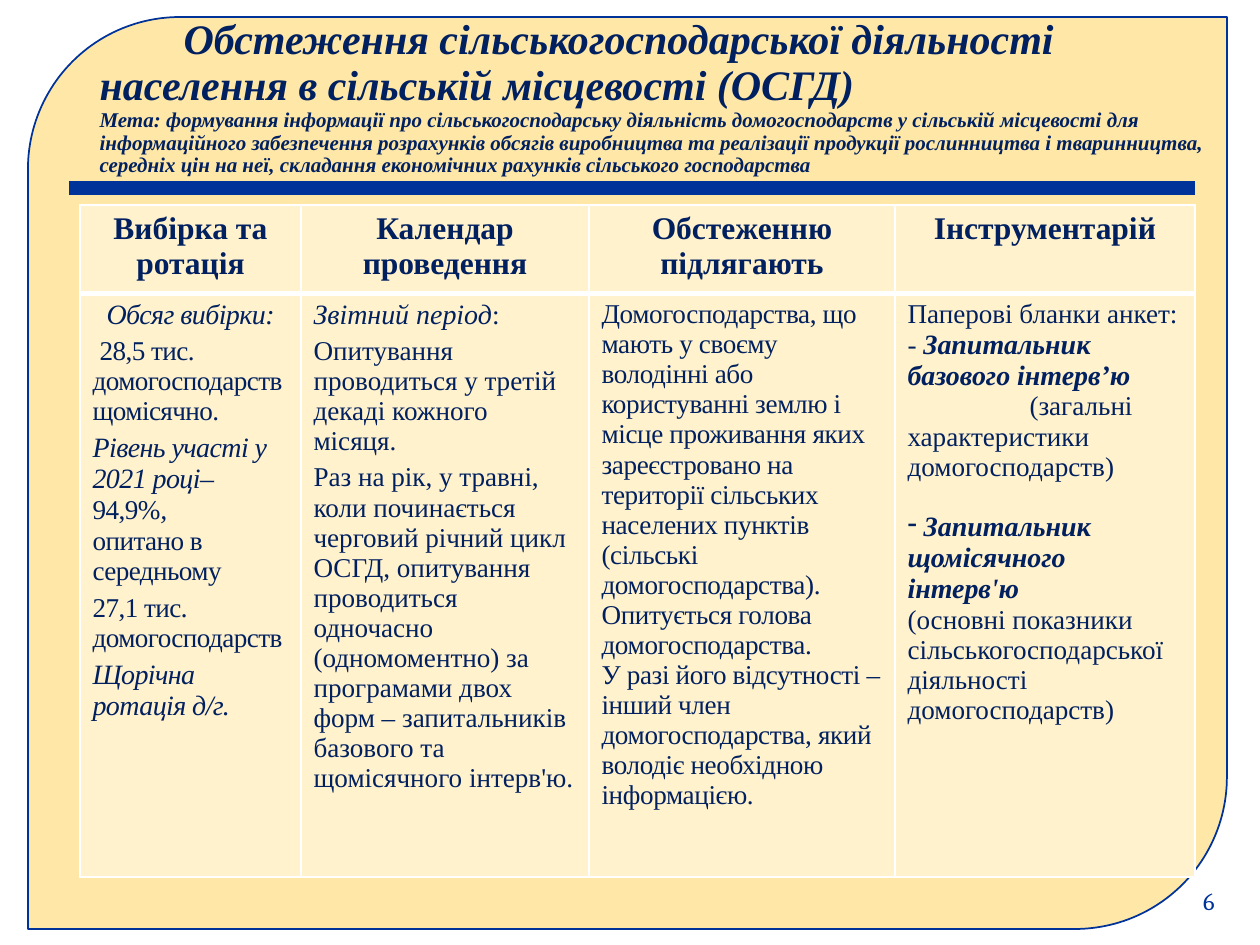
"""Build the slide on the rural household farming survey."""
import pptx
import pptx.util
import pptx.dml.color
import pptx.enum.shapes
import pptx.enum.text
import pptx.oxml
import lxml.etree
from dataclasses import dataclass


@dataclass(frozen=True)
class Theme:
    blue: str = "003399"
    navy: str = "002060"
    sand: str = "FFE8A7"
    cream: str = "FFF2CC"
    white: str = "FFFFFF"
    serif: str = "Times New Roman"
    digit: str = "Cambria"
    title: float = 24
    aim: float = 12
    head: float = 18
    body: float = 15.5
    key: float = 16
    page: float = 14
    gap: float = 3.4


look = Theme()
rgb = pptx.dml.color.RGBColor.from_string
Pt = pptx.util.Pt
side = pptx.enum.text.PP_ALIGN
qn = pptx.oxml.ns.qn


def px(num):
    return pptx.util.Emu(round(num * 914400 / 126))


def put(para, text, size, mark="", tone=look.navy, face=look.serif, track=0):
    run = para.add_run()
    run.text = text
    font = run.font
    font.size, font.name = Pt(size), face
    font.bold, font.italic = "b" in mark, "i" in mark
    font.color.rgb = rgb(tone)
    if track:
        run._r.get_or_add_rPr().set("spc", str(track))


deck = pptx.Presentation()
deck.slide_width, deck.slide_height = px(1260), px(945)
slide = deck.slides.add_slide(deck.slide_layouts[5])
shapes = slide.shapes

panel = shapes.add_shape(
    pptx.enum.shapes.MSO_SHAPE.ROUND_2_DIAG_RECTANGLE, px(28), px(17), px(1199), px(912))
panel.shadow.inherit = False
panel.fill.solid()
panel.fill.fore_color.rgb = rgb(look.sand)
panel.line.color.rgb = rgb(look.blue)
panel.line.width = Pt(1)

title = shapes.title
panel._element.addnext(title._element)
title.left, title.top, title.width, title.height = px(87), px(30), px(1140), px(136)
frame = title.text_frame
frame.word_wrap = True
frame.auto_size = pptx.enum.text.MSO_AUTO_SIZE.NONE
frame.vertical_anchor = pptx.enum.text.MSO_ANCHOR.MIDDLE
para = frame.paragraphs[0]
para.alignment = side.LEFT
para.line_spacing = 0.9
para._p.get_or_add_pPr().set("indent", str(px(84)))
put(para, "Обстеження сільськогосподарської діяльності населення "
    "в сільській місцевості (ОСГД)", look.title, "bi")
para.add_line_break()
put(para, "Мета: формування інформації про сільськогосподарську діяльність "
    "домогосподарств у сільській місцевості для інформаційного забезпечення "
    "розрахунків обсягів виробництва та реалізації продукції рослинництва і "
    "тваринництва, середніх цін на неї, складання економічних рахунків "
    "сільського господарства", look.aim, "bi")

page = shapes.add_textbox(px(1163), px(876), px(64), px(50))
page.text_frame.word_wrap = True
page.text_frame.vertical_anchor = pptx.enum.text.MSO_ANCHOR.MIDDLE
para = page.text_frame.paragraphs[0]
para.alignment = side.RIGHT
put(para, "6", look.page, tone=look.blue, face=look.digit)

rule = shapes.add_connector(
    pptx.enum.shapes.MSO_CONNECTOR.STRAIGHT, px(69), px(188), px(1195), px(188))
rule.line.color.rgb = rgb(look.blue)
rule.line.width = Pt(7.75)
lxml.etree.SubElement(rule._element.spPr, qn("a:effectLst"))

heads = ["Вибірка та ротація", "Календар проведення",
         "Обстеженню підлягають", "Інструментарій"]
wides = [221, 288, 306, 300]
tracks = [-30, 0, -20, 0]
# Each paragraph holds indent, space before, bullet and runs.
cells = [
    [(14, 0, "", [("Обсяг вибірки:", "i")]),
     (7, look.gap, "", [("28,5 тис. домогосподарств щомісячно.", "")]),
     (0, look.gap, "", [("Рівень участі у 2021 році–", "i"), ("\v", ""),
                        ("94,9%", ""), (",", "i")]),
     (0, 0, "", [("опитано в середньому", "")]),
     (0, look.gap, "", [("27,1 тис", ""), (". ", "i"), ("домогосподарств", "")]),
     (0, look.gap, "", [("Щорічна ротація д/г.", "i")])],
    [(0, 0, "", [("Звітний період", "i"), (":", "")]),
     (0, look.gap, "", [("Опитування проводиться у третій декаді кожного місяця.", "")]),
     (0, look.gap, "", [("Раз на рік, у травні, коли починається черговий річний цикл "
                         "ОСГД, опитування проводиться одночасно (одномоментно) за "
                         "програмами двох форм\u00a0– запитальників базового та "
                         "щомісячного інтерв'ю.", "")])],
    [(0, 0, "", [("Домогосподарства, що мають у своєму володінні або користуванні "
                  "землю і місце проживання яких зареєстровано на території "
                  "сільських населених пунктів (сільські домогосподарства).", "")]),
     (0, 0, "", [("Опитується голова домогосподарства.", "")]),
     (0, 0, "", [("У разі його відсутності –інший член домогосподарства, який "
                  "володіє необхідною інформацією.", "")])],
    [(0, 0, "", [("Паперові бланки анкет:", "")]),
     (0, 0, "", [("- ", ""), ("Запитальник базового інтерв’ю", "bi")]),
     (122, 0, "", [("(загальні характеристики домогосподарств)", "")]),
     (0, 17, "-", [(" Запитальник щомісячного інтерв'ю", "bi")]),
     (0, 0, "", [("(основні показники сільськогосподарської діяльності "
                  "домогосподарств)", "")])],
]

grid = shapes.add_table(2, 4, px(80), px(205), px(1115), px(666)).table
grid.rows[0].height, grid.rows[1].height = px(82), px(584)
for col, wide in enumerate(wides):
    grid.columns[col].width = px(wide)
    para = grid.cell(0, col).text_frame.paragraphs[0]
    para.alignment = side.CENTER
    put(para, heads[col], look.head, "b")
    frame = grid.cell(1, col).text_frame
    for num, (dent, gap, dash, runs) in enumerate(cells[col]):
        para = frame.add_paragraph() if num else frame.paragraphs[0]
        if gap:
            para.space_before = Pt(gap)
        props = para._p.get_or_add_pPr()
        props.set("marL", "0")
        props.set("indent", str(px(dent)))
        if dash:
            lxml.etree.SubElement(props, qn("a:buChar")).set("char", dash)
        for text, mark in runs:
            if text == "\v":
                para.add_line_break()
            else:
                put(para, text, look.key if "i" in mark else look.body, mark,
                    track=tracks[col])
    for row in range(2):
        cell = grid.cell(row, col)
        props = cell._tc.get_or_add_tcPr()
        for edge in "LRTB":
            thick = 3 if (row, edge) in ((0, "B"), (1, "T")) else 1
            line = lxml.etree.SubElement(props, qn("a:ln" + edge))
            line.set("w", str(Pt(thick)))
            fill = lxml.etree.SubElement(line, qn("a:solidFill"))
            lxml.etree.SubElement(fill, qn("a:srgbClr")).set("val", look.white)
        cell.fill.solid()
        cell.fill.fore_color.rgb = rgb(look.cream)

deck.save("out.pptx")
